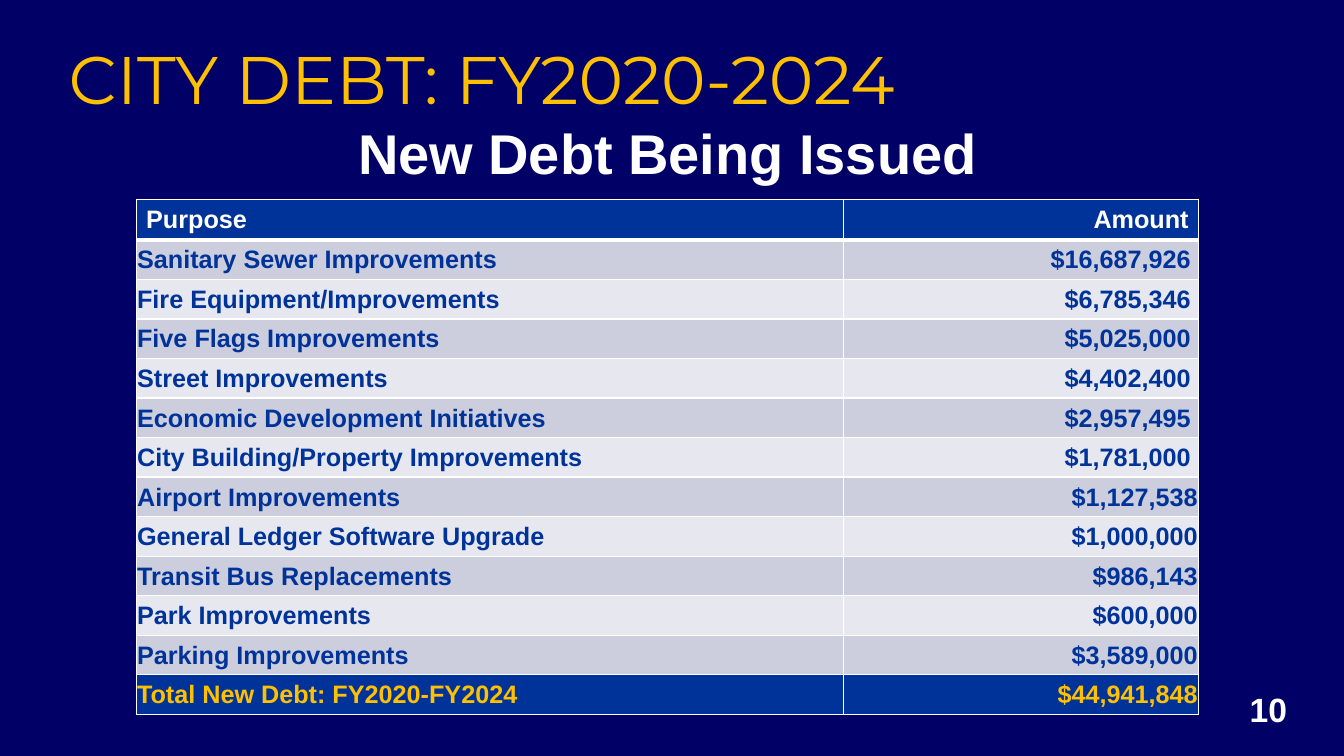
from typing import NamedTuple

from lxml.etree import SubElement
from pptx import Presentation
from pptx.dml.color import RGBColor
from pptx.enum.text import MSO_ANCHOR, MSO_AUTO_SIZE, PP_ALIGN
from pptx.oxml.ns import qn
from pptx.util import Pt

PX = 9144  # EMU per px, 100 px to the inch

NAVY = RGBColor(0x00, 0x00, 0x66)
BLUE = RGBColor(0x00, 0x33, 0x99)
GOLD = RGBColor(0xFF, 0xC0, 0x00)
WHITE = RGBColor(0xFF, 0xFF, 0xFF)
BAND_DARK = RGBColor(0xCC, 0xCE, 0xDE)
BAND_LIGHT = RGBColor(0xE7, 0xE8, 0xEF)


class Box(NamedTuple):
    left: int
    top: int
    width: int
    height: int


class Label(NamedTuple):
    text: str
    box: Box
    size: int


class Debt(NamedTuple):
    purpose: str
    amount: str
    right_margin: int = 1


class RowStyle(NamedTuple):
    fill: RGBColor
    color: RGBColor
    top_line: int = 1
    bottom_line: int = 1


TITLE = Label("CITY DEBT: FY2020-2024", Box(58, 32, 1217, 125), 48)
LABELS = [
    Label("10", Box(1208, 679, 100, 50), 24),
    Label("New Debt Being Issued", Box(85, 113, 1154, 77), 40),
]
TABLE_BOX = Box(135, 198, 1054, 510)
COLUMN_WIDTHS = [702, 352]
ALIGNMENTS = [PP_ALIGN.LEFT, PP_ALIGN.RIGHT]
HEADER = Debt("Purpose", "Amount", 10)
DEBTS = [
    Debt("Sanitary Sewer Improvements", "$16,687,926", 8),
    Debt("Fire Equipment/Improvements", "$6,785,346", 8),
    Debt("Five Flags Improvements", "$5,025,000", 8),
    Debt("Street Improvements", "$4,402,400", 8),
    Debt("Economic Development Initiatives", "$2,957,495", 8),
    Debt("City Building/Property Improvements", "$1,781,000", 8),
    Debt("Airport Improvements", "$1,127,538"),
    Debt("General Ledger Software Upgrade", "$1,000,000"),
    Debt("Transit Bus Replacements", "$986,143"),
    Debt("Park Improvements", "$600,000"),
    Debt("Parking Improvements", "$3,589,000"),
]
TOTAL = Debt("Total New Debt: FY2020-FY2024", "$44,941,848")


def emu(box: Box) -> list[int]:
    return [value * PX for value in box]


def write(tf, text: str, size: int, color: RGBColor, align: PP_ALIGN,
          font: str = "Arial", bold: bool = True) -> None:
    p = tf.paragraphs[0]
    p.text = text
    p.alignment = align
    f = p.runs[0].font
    f.name, f.size, f.bold = font, Pt(size), bold
    f.color.rgb = color


def add_title(s, label: Label) -> None:
    title = s.shapes.title
    title.left, title.top, title.width, title.height = emu(label.box)
    tf = title.text_frame
    tf.vertical_anchor = MSO_ANCHOR.TOP
    tf.auto_size = MSO_AUTO_SIZE.NONE
    write(tf, label.text, label.size, GOLD, PP_ALIGN.LEFT, "Montserrat", False)


def add_label(s, label: Label) -> None:
    tf = s.shapes.add_textbox(*emu(label.box)).text_frame
    tf.word_wrap = True
    write(tf, label.text, label.size, WHITE, PP_ALIGN.CENTER)


def add_borders(cell, style: RowStyle) -> None:
    """Draw white cell edges; must run before the cell gets its fill."""
    tc_pr = cell._tc.get_or_add_tcPr()
    widths = {"L": 1, "R": 1, "T": style.top_line, "B": style.bottom_line}
    for side, width in widths.items():
        line = SubElement(tc_pr, qn(f"a:ln{side}"), w=str(Pt(width)))
        fill = SubElement(line, qn("a:solidFill"))
        SubElement(fill, qn("a:srgbClr"), val=str(WHITE))


def fill_row(row, debt: Debt, style: RowStyle) -> None:
    texts = (debt.purpose, debt.amount)
    for cell, text, align in zip(row.cells, texts, ALIGNMENTS):
        add_borders(cell, style)
        cell.fill.solid()
        cell.fill.fore_color.rgb = style.fill
        cell.vertical_anchor = MSO_ANCHOR.MIDDLE
        if debt is not HEADER:
            cell.margin_left = cell.margin_top = PX
            cell.margin_right = debt.right_margin * PX
            cell.margin_bottom = 0
        write(cell.text_frame, text, 18, style.color, align)


def add_debt_table(s) -> None:
    rows = [(HEADER, RowStyle(BLUE, WHITE, bottom_line=3))]
    for i, debt in enumerate(DEBTS):
        band = BAND_LIGHT if i % 2 else BAND_DARK
        rows.append((debt, RowStyle(band, BLUE, top_line=1 if i else 3)))
    rows.append((TOTAL, RowStyle(BLUE, GOLD)))

    table = s.shapes.add_table(len(rows), len(COLUMN_WIDTHS), *emu(TABLE_BOX)).table
    for column, width in zip(table.columns, COLUMN_WIDTHS):
        column.width = width * PX
    for row, (debt, style) in zip(table.rows, rows):
        fill_row(row, debt, style)


def main() -> None:
    prs = Presentation()
    prs.slide_width, prs.slide_height = 1333 * PX, 750 * PX
    s = prs.slides.add_slide(prs.slide_layouts[5])
    s.background.fill.solid()
    s.background.fill.fore_color.rgb = NAVY
    add_title(s, TITLE)
    for label in LABELS:
        add_label(s, label)
    add_debt_table(s)
    prs.save("out.pptx")


if __name__ == "__main__":
    main()
